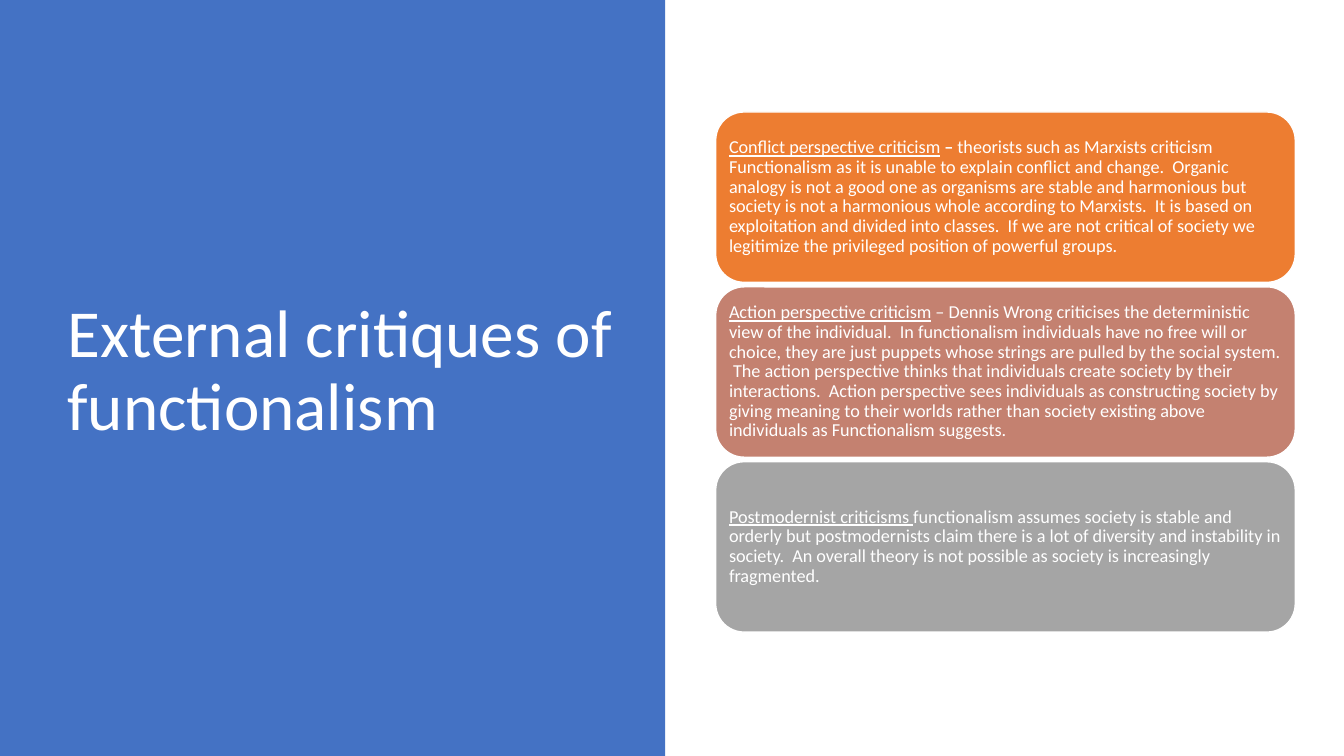
from dataclasses import dataclass

from pptx import Presentation
from pptx.dml.color import RGBColor
from pptx.enum.shapes import MSO_SHAPE
from pptx.enum.text import MSO_ANCHOR, PP_ALIGN
from pptx.shapes.autoshape import Shape
from pptx.slide import Slide
from pptx.text.text import TextFrame
from pptx.util import Pt

RECTANGLE = MSO_SHAPE.RECTANGLE
ROUNDED = MSO_SHAPE.ROUNDED_RECTANGLE
MIDDLE = MSO_ANCHOR.MIDDLE
LEFT = PP_ALIGN.LEFT

COLORS = {
    "blue": "4472C4",
    "orange": "ED7D31",
    "rose": "C48170",
    "gray": "A5A5A5",
    "white": "FFFFFF",
}
FONT = "Calibri"
SLIDE_WIDTH, SLIDE_HEIGHT = 960, 540
PANEL_WIDTH = 475.2
CARD_LEFT, CARD_TOP = 511.2, 80
CARD_WIDTH, CARD_HEIGHT = 414, 121.7
CARD_PITCH = 124.9
CARD_INSET = 3.6


@dataclass
class Span:
    text: str
    underline: bool = False
    bold: bool = False


@dataclass
class Critique:
    color: str
    spans: list[Span]


CRITIQUES = [
    Critique("orange", [
        Span("Conflict perspective criticism", underline=True),
        Span(" – ", bold=True),
        Span("theorists such as Marxists criticism Functionalism as it is unable to "
             "explain conflict and change.  Organic analogy is not a good one as "
             "organisms are stable and harmonious but society is not a harmonious "
             "whole according to Marxists.  It is based on exploitation and divided "
             "into classes.  If we are not critical of society we legitimize the "
             "privileged position of powerful groups."),
    ]),
    Critique("rose", [
        Span("Action perspective criticism", underline=True),
        Span(" – Dennis Wrong criticises the deterministic view of the individual.  "
             "In functionalism individuals have no free will or choice, they are just "
             "puppets whose strings are pulled by the social system.  The action "
             "perspective thinks that individuals create society by their "
             "interactions.  Action perspective sees individuals as constructing "
             "society by giving meaning to their worlds rather than society existing "
             "above individuals as Functionalism suggests."),
    ]),
    Critique("gray", [
        Span("Postmodernist criticisms ", underline=True),
        Span("functionalism assumes society is stable and orderly but postmodernists "
             "claim there is a lot of diversity and instability in society.  An "
             "overall theory is not possible as society is increasingly fragmented."),
    ]),
]


def rgb(name: str) -> RGBColor:
    return RGBColor.from_string(COLORS[name])


def add_filled_shape(slide: Slide, kind: MSO_SHAPE, left: float, top: float,
                     width: float, height: float, color: str) -> Shape:
    shape = slide.shapes.add_shape(kind, Pt(left), Pt(top), Pt(width), Pt(height))
    shape.shadow.inherit = False
    shape.fill.solid()
    shape.fill.fore_color.rgb = rgb(color)
    shape.line.fill.background()
    return shape


def write_spans(frame: TextFrame, spans: list[Span], size: float) -> None:
    """Fill the frame with one white, left-aligned, vertically centred paragraph."""
    frame.word_wrap = True
    frame.vertical_anchor = MIDDLE
    paragraph = frame.paragraphs[0]
    paragraph.alignment = LEFT
    paragraph.line_spacing = 0.9
    for span in spans:
        run = paragraph.add_run()
        run.text = span.text
        run.font.name = FONT
        run.font.size = Pt(size)
        run.font.color.rgb = rgb("white")
        run.font.underline = span.underline
        run.font.bold = span.bold


def add_critique_card(slide: Slide, critique: Critique, top: float) -> None:
    card = add_filled_shape(slide, ROUNDED, CARD_LEFT, top, CARD_WIDTH, CARD_HEIGHT,
                            critique.color)
    card.line.color.rgb = rgb("white")
    card.line.width = Pt(1)
    frame = card.text_frame
    frame.margin_left = frame.margin_right = Pt(CARD_INSET)
    frame.margin_top = frame.margin_bottom = Pt(CARD_INSET)
    write_spans(frame, critique.spans, 13)


def main() -> None:
    presentation = Presentation()
    presentation.slide_width = Pt(SLIDE_WIDTH)
    presentation.slide_height = Pt(SLIDE_HEIGHT)
    slide = presentation.slides.add_slide(presentation.slide_layouts[6])

    add_filled_shape(slide, RECTANGLE, 0, 0, PANEL_WIDTH, SLIDE_HEIGHT, "blue")
    title = slide.shapes.add_textbox(Pt(41), Pt(49), Pt(408), Pt(433.4))
    write_spans(title.text_frame, [Span("External critiques of functionalism")], 48)

    for index, critique in enumerate(CRITIQUES):
        add_critique_card(slide, critique, CARD_TOP + index * CARD_PITCH)

    presentation.save("out.pptx")


if __name__ == "__main__":
    main()
